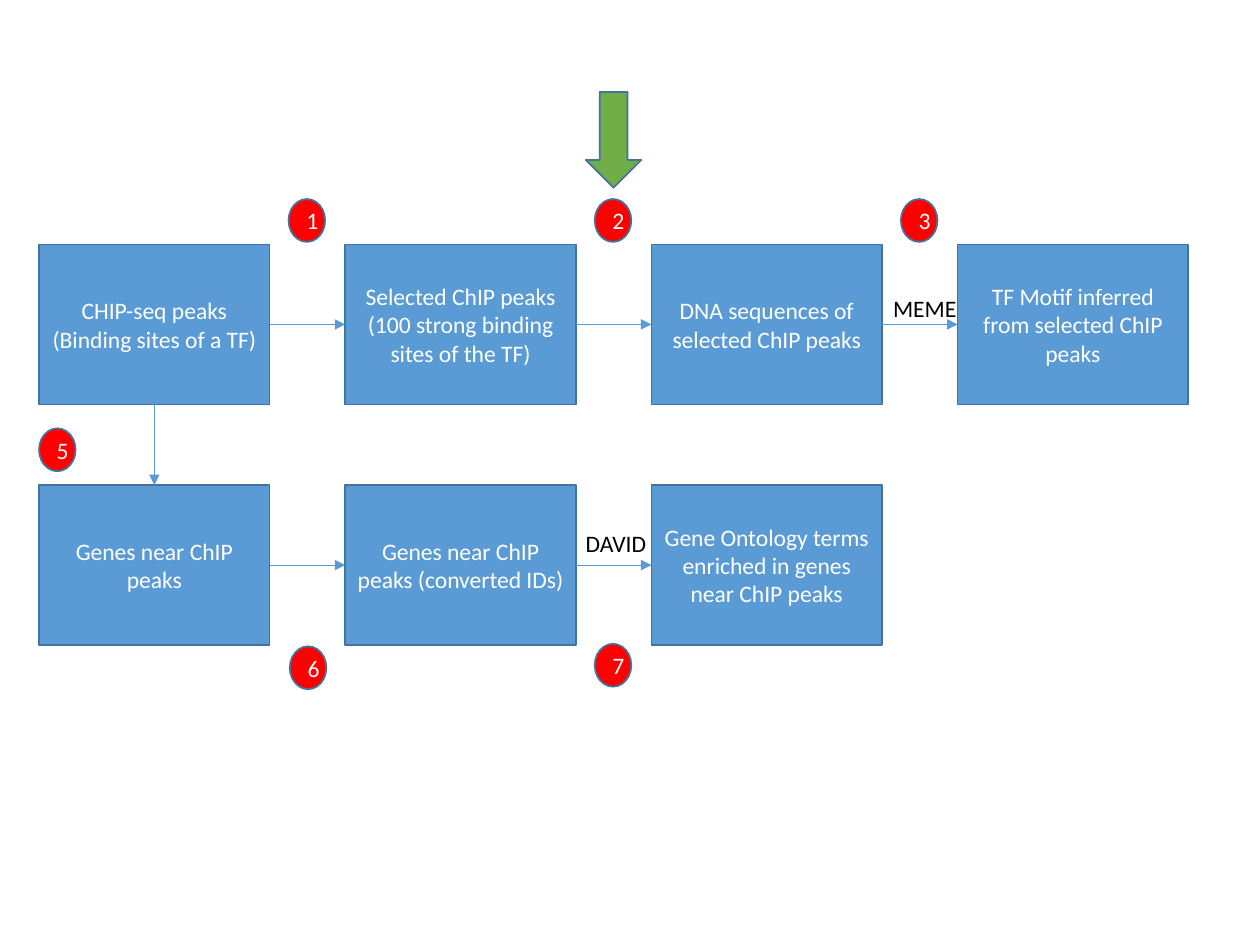
from pptx import Presentation
from pptx.dml.color import RGBColor
from pptx.enum.shapes import MSO_CONNECTOR as Conn, MSO_SHAPE as Shape
from pptx.enum.text import MSO_ANCHOR as Anchor, MSO_AUTO_SIZE as Fit, PP_ALIGN as Align
from pptx.oxml.ns import qn
from pptx.util import Inches, Pt
from lxml.etree import SubElement


def color(code):
    return RGBColor.from_string(code)


def draw(kind, left, top, width, height, fill, text=""):
    shape = slide.shapes.add_shape(
        kind, Inches(left), Inches(top), Inches(width), Inches(height))
    shape.shadow.inherit = False
    shape.fill.solid()
    shape.fill.fore_color.rgb = color(fill)
    shape.line.color.rgb = color("43739E")
    shape.line.width = Pt(1)
    if text:
        frame = shape.text_frame
        frame.text = text
        frame.word_wrap = True
        frame.vertical_anchor = Anchor.MIDDLE
        par = frame.paragraphs[0]
        par.alignment = Align.CENTER
        font = par.runs[0].font
        font.name, font.size = "Calibri", Pt(13.5)
        font.color.rgb = color("FFFFFF")
    return shape


deck = Presentation()
deck.slide_width, deck.slide_height = Inches(10), Inches(7.5)
slide = deck.slides.add_slide(deck.slide_layouts[6])

left, step = 0.31, 2.43
rows = [
    (1.94, ["CHIP-seq peaks (Binding sites of a TF)",
            "Selected ChIP peaks (100 strong binding sites of the TF)",
            "DNA sequences of selected ChIP peaks",
            "TF Motif inferred from selected ChIP peaks"]),
    (3.85, ["Genes near ChIP peaks",
            "Genes near ChIP peaks (converted IDs)",
            "Gene Ontology terms enriched in genes near ChIP peaks"]),
]
grid = [[draw(Shape.RECTANGLE, left + col * step, top, 1.83, 1.27, "5B9BD5", text)
         for col, text in enumerate(texts)] for top, texts in rows]

links = [(a, 3, b, 1) for row in grid for a, b in zip(row, row[1:])]
links.append((grid[0][0], 2, grid[1][0], 0))
for start, out, end, into in links:
    link = slide.shapes.add_connector(Conn.STRAIGHT, 0, 0, 0, 0)
    link.begin_connect(start, out)
    link.end_connect(end, into)
    link.line.color.rgb = color("5B9BD5")
    link.line.width = Pt(0.5)
    SubElement(link.line._get_or_add_ln(), qn("a:tailEnd"), type="triangle")
    SubElement(link._element.spPr, qn("a:effectLst"))

for text, x, y, width in [("MEME", 6.99, 2.28, 0.71), ("DAVID", 4.55, 4.15, 0.68)]:
    label = slide.shapes.add_textbox(Inches(x), Inches(y), Inches(width), Inches(0.33))
    frame = label.text_frame
    frame.text = text
    frame.word_wrap = False
    frame.auto_size = Fit.SHAPE_TO_FIT_TEXT
    font = frame.paragraphs[0].runs[0].font
    font.name, font.size = "Calibri", Pt(13.5)
    font.color.rgb = color("000000")

marks = [(str(num + 1), 2.29 + num * step, 1.58) for num in range(3)]
marks += [("5", left, 3.4), ("6", 2.3, 5.13), ("7", 4.72, 5.11)]
for text, x, y in marks:
    draw(Shape.OVAL, x, y, 0.29, 0.34, "FF0000", text)

draw(Shape.DOWN_ARROW, 4.65, 0.73, 0.44, 0.76, "70AD47")

deck.save("out.pptx")
